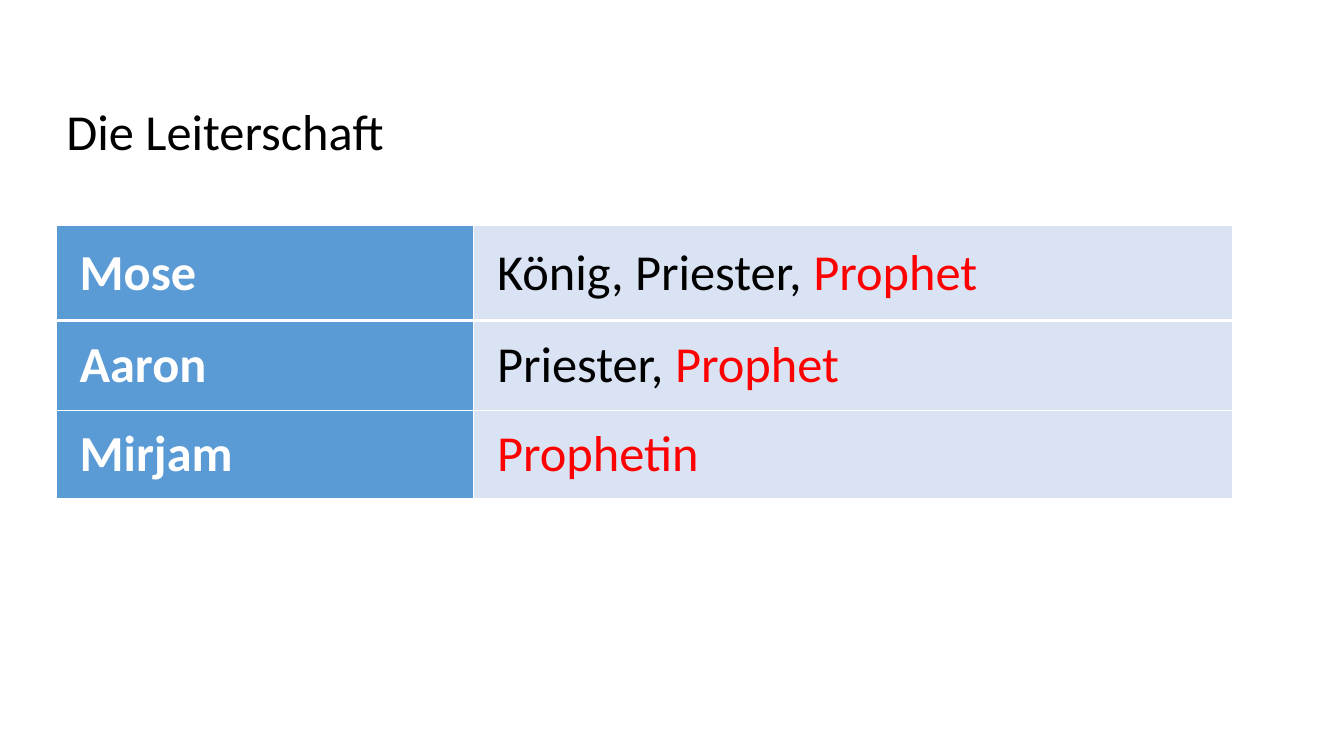
from dataclasses import dataclass

import pptx
import pptx.dml.color
import pptx.enum.text
import pptx.oxml
import pptx.oxml.ns
import pptx.util
from pptx.util import Inches


@dataclass(frozen=True)
class Theme:
    font: str = "Calibri"
    size: int = 36
    black: str = "000000"
    white: str = "FFFFFF"
    red: str = "FF0000"
    name_fill: str = "5B9BD5"
    role_fill: str = "DAE3F3"
    thin: int = 1
    thick: int = 3


THEME = Theme()
COLUMN_WIDTHS = (4.14, 7.53)
ROW_HEIGHTS = (0.94, 0.89, 0.88)
LEADERS = (
    ("Mose", "König, Priester, ", "Prophet"),
    ("Aaron", "Priester, ", "Prophet"),
    ("Mirjam", "", "Prophetin"),
)


def add_run(p, text, color=THEME.black, bold=False):
    r = p.add_run()
    r.text = text
    r.font.name = THEME.font
    r.font.size = pptx.util.Pt(THEME.size)
    r.font.bold = bold
    r.font.color.rgb = pptx.dml.color.RGBColor.from_string(color)


def add_title(s, text, left, top, width, height):
    tf = s.shapes.add_textbox(
        Inches(left), Inches(top), Inches(width), Inches(height)).text_frame
    tf.word_wrap = False
    tf.auto_size = pptx.enum.text.MSO_AUTO_SIZE.SHAPE_TO_FIT_TEXT
    add_run(tf.paragraphs[0], text)


def set_borders(cell, **widths):
    """Draw white borders; widths are points keyed L, R, T, B in schema order."""
    tcPr = cell._tc.get_or_add_tcPr()
    for side, width in widths.items():
        tcPr.append(pptx.oxml.parse_xml(
            f'<a:ln{side} {pptx.oxml.ns.nsdecls("a")} w="{pptx.util.Pt(width)}">'
            f'<a:solidFill><a:srgbClr val="{THEME.white}"/></a:solidFill>'
            f'</a:ln{side}>'))


def format_cell(cell, fill, top, bottom):
    cell.margin_left = cell.margin_right = Inches(0.23)
    cell.margin_top = cell.margin_bottom = 0
    cell.vertical_anchor = pptx.enum.text.MSO_ANCHOR.MIDDLE
    set_borders(cell, L=THEME.thin, R=THEME.thin, T=top, B=bottom)
    cell.fill.solid()
    cell.fill.fore_color.rgb = pptx.dml.color.RGBColor.from_string(fill)


def add_leader_table(s, left, top):
    table = s.shapes.add_table(
        len(LEADERS), len(COLUMN_WIDTHS), Inches(left), Inches(top),
        Inches(sum(COLUMN_WIDTHS)), Inches(sum(ROW_HEIGHTS))).table
    table.horz_banding = False
    for column, width in zip(table.columns, COLUMN_WIDTHS):
        column.width = Inches(width)
    for i, (name, roles, prophet) in enumerate(LEADERS):
        table.rows[i].height = Inches(ROW_HEIGHTS[i])
        name_cell, role_cell = table.rows[i].cells
        for cell, fill in ((name_cell, THEME.name_fill), (role_cell, THEME.role_fill)):
            format_cell(cell, fill,
                        top=THEME.thick if i == 1 else THEME.thin,
                        bottom=THEME.thick if i == 0 else THEME.thin)
        add_run(name_cell.text_frame.paragraphs[0], name, color=THEME.white, bold=True)
        p = role_cell.text_frame.paragraphs[0]
        if roles:
            add_run(p, roles)
        add_run(p, prophet, color=THEME.red)


def main():
    prs = pptx.Presentation()
    prs.slide_width, prs.slide_height = Inches(13.33), Inches(7.5)
    s = prs.slides.add_slide(prs.slide_layouts[6])
    add_title(s, "Die Leiterschaft", 0.56, 0.94, 3.39, 0.71)
    add_leader_table(s, 0.56, 2.24)
    prs.save("out.pptx")


if __name__ == "__main__":
    main()
